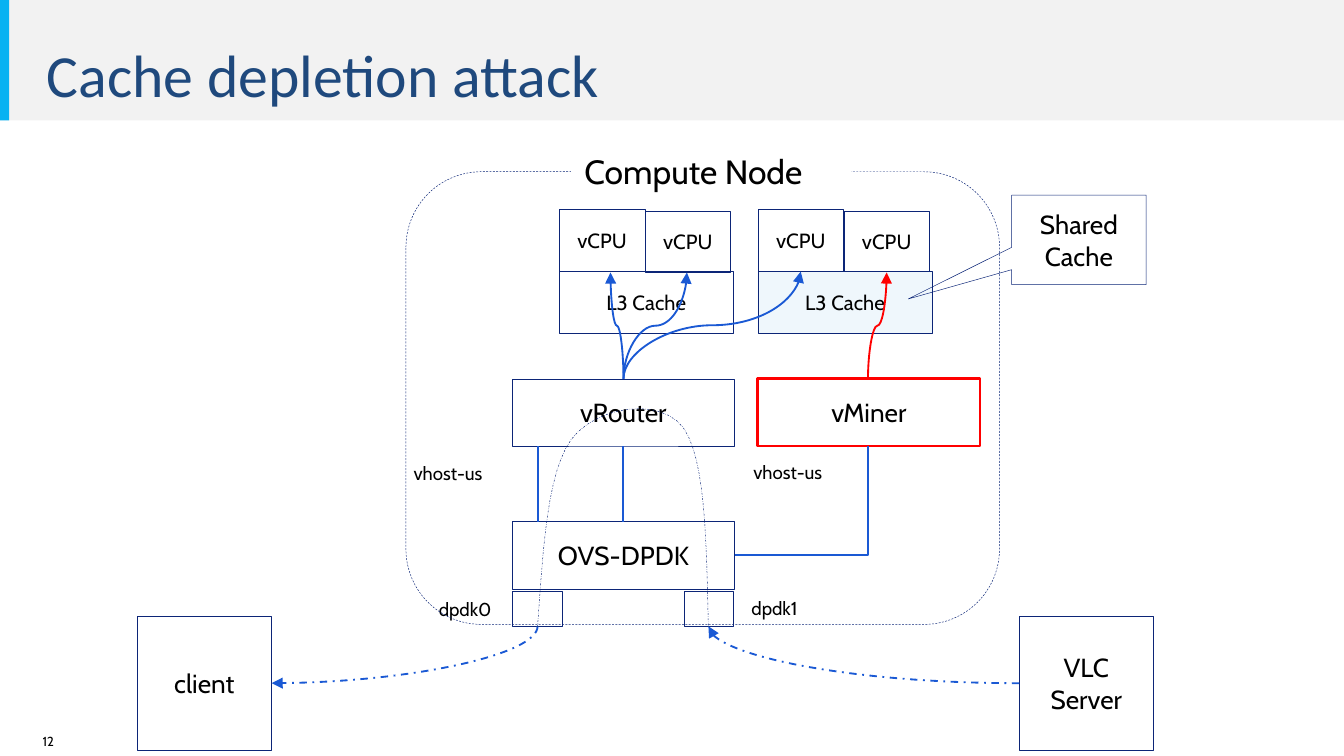
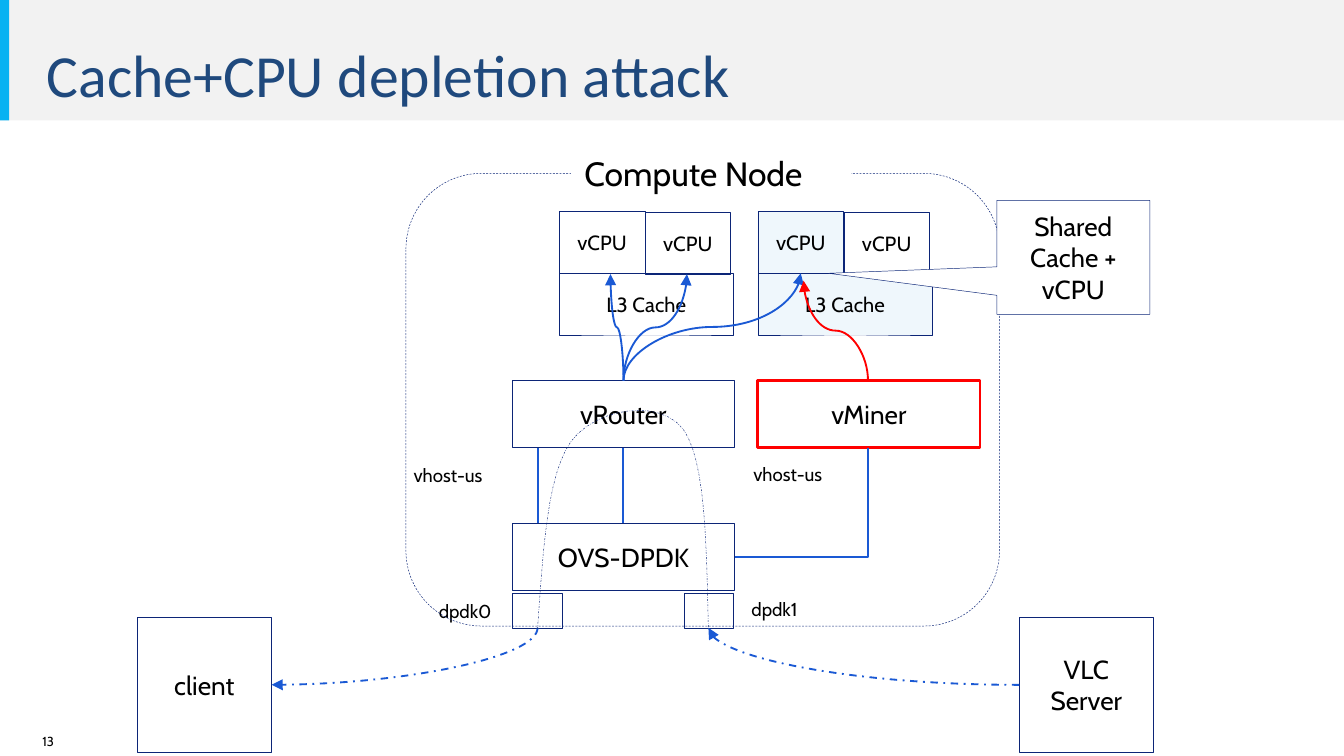
from dataclasses import dataclass
from typing import Any

from lxml.etree import SubElement
from pptx import Presentation
from pptx.dml.color import RGBColor
from pptx.enum.dml import MSO_LINE as Dash
from pptx.enum.shapes import MSO_CONNECTOR as Link, MSO_SHAPE as Shape
from pptx.enum.text import MSO_ANCHOR as Anchor, MSO_AUTO_SIZE as AutoSize, PP_ALIGN as Align
from pptx.oxml.ns import qn
from pptx.util import Pt

# Colours and fonts
WHITE = RGBColor(0xFF, 0xFF, 0xFF)
BLACK = RGBColor(0x00, 0x00, 0x00)
BAND_GREY = RGBColor(0xF2, 0xF2, 0xF2)
ACCENT = RGBColor(0x08, 0xB2, 0xF2)
TITLE_BLUE = RGBColor(0x1F, 0x49, 0x7D)
OUTLINE = RGBColor(0x0C, 0x25, 0x77)
LINK_BLUE = RGBColor(0x1A, 0x59, 0xD4)
ATTACK_RED = RGBColor(0xFF, 0x00, 0x00)
SHARED = RGBColor(0xEF, 0xF7, 0xFC)
BODY_FONT, TITLE_FONT = "Cabin", "Calibri"

# Directions in which a connector leaves its start, as rotations
DOWN, LEFT, UP = 90, 180, 270

# Cubic segments of the traffic path through the router: two controls, one end
TRAFFIC_START = (288, 336)
TRAFFIC_CURVES = [
    ((291, 294.5), (293, 253.5), (306, 235.5)),
    ((319.5, 217.5), (353.5, 212.5), (366, 229)),
    ((378, 245.5), (378.5, 290.5), (379.5, 335.5)),
]
CURVE_STEPS = 12


def points(*lengths):
    return [Pt(length) for length in lengths]


def set_margins(frame, left, top, right, bottom):
    frame.margin_left, frame.margin_top, frame.margin_right, frame.margin_bottom = points(
        left, top, right, bottom)


def write(frame, text, size, font=BODY_FONT, color=BLACK, align=Align.LEFT):
    frame.text = text
    paragraph = frame.paragraphs[0]
    paragraph.alignment = align
    run_font = paragraph.runs[0].font
    run_font.name, run_font.size = font, Pt(size)
    run_font.color.rgb = color


def paint(shape, fill=None, line=None, width=0.25, dash=None):
    shape.shadow.inherit = False
    if fill is None:
        shape.fill.background()
    else:
        shape.fill.solid()
        shape.fill.fore_color.rgb = fill
    if line is None:
        shape.line.fill.background()
    else:
        shape.line.color.rgb = line
        shape.line.width = Pt(width)
        if dash is not None:
            shape.line.dash_style = dash


def bezier(start, control1, control2, end):
    """Points along a cubic curve, without its start."""
    for step in range(1, CURVE_STEPS + 1):
        t = step / CURVE_STEPS
        u = 1 - t
        yield tuple(u**3 * a + 3 * u * u * t * b + 3 * u * t * t * c + t**3 * d
                    for a, b, c, d in zip(start, control1, control2, end))


@dataclass
class Diagram:
    """Draws diagram parts on a slide, all lowered by the same drop."""
    slide: Any
    drop: float

    def box(self, x, y, w, h, text="", size=14, fill=None, line=OUTLINE, width=0.25,
            dash=None, kind=Shape.RECTANGLE):
        box = self.slide.shapes.add_shape(kind, *points(x, y + self.drop, w, h))
        paint(box, fill, line, width, dash)
        if text:
            frame = box.text_frame
            frame.word_wrap = True
            frame.vertical_anchor = Anchor.MIDDLE
            set_margins(frame, 5, 3, 5, 3)
            write(frame, text, size, align=Align.CENTER)
        return box

    def label(self, x, y, w, h, text, size=10, fill=None):
        label = self.slide.shapes.add_textbox(*points(x, y + self.drop, w, h))
        if fill is not None:
            label.fill.solid()
            label.fill.fore_color.rgb = fill
        frame = label.text_frame
        frame.word_wrap = False
        write(frame, text, size)
        frame.auto_size = AutoSize.SHAPE_TO_FIT_TEXT

    def link(self, start, end, kind=Link.STRAIGHT, leaving=None, preset=None,
             color=LINK_BLUE, dash=None, arrow=False):
        (x1, y1), (x2, y2) = start, end
        dx, dy = x2 - x1, y2 - y1
        # Turn the span back, so that the connector leaves along its own x axis
        across, down = {None: (dx, dy), DOWN: (dy, -dx), LEFT: (-dx, -dy),
                        UP: (-dy, dx)}[leaving]
        mid_x, mid_y = (x1 + x2) / 2, (y1 + y2) / 2 + self.drop
        link = self.slide.shapes.add_connector(kind, *points(
            mid_x - across / 2, mid_y - down / 2, mid_x + across / 2, mid_y + down / 2))
        if leaving is not None:
            link.rotation = leaving
        properties = link.element.spPr
        if preset:
            properties.find(qn("a:prstGeom")).set("prst", preset)
        link.line.color.rgb = color
        link.line.width = Pt(1)
        if dash is not None:
            link.line.dash_style = dash
        if arrow:
            SubElement(properties.find(qn("a:ln")), qn("a:tailEnd"), type="triangle")
        SubElement(properties, qn("a:effectLst"))

    def usage_arrow(self, start, end, color=LINK_BLUE):
        self.link(start, end, Link.CURVE, UP, color=color, arrow=True)

    def stream_arrow(self, start, end, leaving):
        self.link(start, end, Link.CURVE, leaving, "curvedConnector2",
                  dash=Dash.DASH_DOT, arrow=True)

    def cpu_bank(self, x, cpu_fill=None, cache_fill=None):
        self.box(x + 46, 113, 46, 33, "vCPU", 11)
        self.box(x, 112.3, 46, 33, "vCPU", 11, cpu_fill)
        self.box(x, 145.5, 93.5, 33, "L3 Cache", 11, cache_fill)

    def traffic_path(self):
        here, route = TRAFFIC_START, []
        for control1, control2, end in TRAFFIC_CURVES:
            route += bezier(here, control1, control2, end)
            here = end
        start_x, start_y = TRAFFIC_START
        outline = self.slide.shapes.build_freeform(*points(start_x, start_y + self.drop))
        outline.add_line_segments([points(x, y + self.drop) for x, y in route], close=False)
        paint(outline.convert_to_shape(), line=OUTLINE, dash=Dash.DASH_DOT)

    def callout(self, x, y, w, h, text, pointer, fill=None):
        callout = self.box(x, y, w, h, text, fill=fill, kind=Shape.RECTANGULAR_CALLOUT)
        callout.adjustments[0], callout.adjustments[1] = pointer


def add_frame(slide, title, number):
    """Title band, accent bar, title and page number."""
    for width, color in ((720, BAND_GREY), (5, ACCENT)):
        band = slide.shapes.add_shape(Shape.RECTANGLE, *points(0, 0, width, 64.5))
        paint(band, color)

    page = slide.shapes.add_textbox(*points(0, 389.5, 36, 16)).text_frame
    page.word_wrap = True
    write(page, str(number), 7, align=Align.RIGHT)

    heading = slide.shapes.add_textbox(*points(18, 5, 562, 54)).text_frame
    heading.word_wrap = True
    heading.vertical_anchor = Anchor.BOTTOM
    set_margins(heading, 7.2, 0, 0, 0)
    write(heading, title, 32, TITLE_FONT, TITLE_BLUE)
    heading.paragraphs[0].line_spacing = 0.9


def draw_attack(diagram, miner_target, shared_cpu=None):
    # Switch, virtual machines and ports
    diagram.box(274.5, 279.5, 119, 36, "OVS-DPDK", fill=WHITE)
    diagram.box(274.5, 203, 119, 36, "vRouter", fill=WHITE)
    diagram.box(406, 203, 119, 36, "vMiner", fill=WHITE, line=ATTACK_RED, width=1.5)
    for port_x in (274.5, 366.5):
        diagram.box(port_x, 317, 26.5, 18.5, fill=WHITE)
    diagram.label(228, 317, 46, 19.5, "dpdk0")
    diagram.label(395.5, 316, 46, 19.5, "dpdk1")
    diagram.label(214.5, 244, 60, 19.5, "vhost-us")
    diagram.label(396.5, 243.5, 60, 19.5, "vhost-us")

    # Links to the switch
    for link_x in (288, 334):
        diagram.link((link_x, 239), (link_x, 279.5))
    diagram.link((465, 239), (393.5, 297.5), Link.ELBOW, DOWN, "bentConnector2")

    # Processors and caches
    diagram.cpu_bank(299.5)
    diagram.cpu_bank(406, shared_cpu, SHARED)

    # Video stream from server to client
    diagram.box(73.5, 330, 72, 72, "client")
    diagram.box(546, 330, 72, 72, "VLC Server")
    diagram.stream_arrow((546, 366), (379.5, 335.5), LEFT)
    diagram.stream_arrow((288, 335.5), (145.5, 366), DOWN)
    diagram.traffic_path()

    # Processor use of each virtual machine
    for cpu in ((327, 146), (368, 146), (429, 145.5)):
        diagram.usage_arrow((334, 203), cpu)
    diagram.usage_arrow((465, 203), miner_target, ATTACK_RED)

    # Compute node border
    diagram.box(217.5, 92, 318, 242.5, dash=Dash.DASH, kind=Shape.ROUNDED_RECTANGLE)
    diagram.label(306, 77.3, 150, 29, "Compute Node", 18, WHITE)


def main():
    prs = Presentation()
    prs.slide_width, prs.slide_height = points(720, 405)
    blank = prs.slide_layouts[6]

    # Cache depletion
    slide = prs.slides.add_slide(blank)
    add_frame(slide, "Cache depletion attack", 12)
    cache_attack = Diagram(slide, 0)
    draw_attack(cache_attack, (475, 146))
    cache_attack.callout(542, 104.5, 72, 48, "Shared Cache", (-1.27, 0.66))

    # Cache and CPU depletion
    slide = prs.slides.add_slide(blank)
    add_frame(slide, "Cache+CPU depletion attack", 13)
    cpu_attack = Diagram(slide, 0.9)
    draw_attack(cpu_attack, (430.5, 149.5), SHARED)
    cpu_attack.callout(534, 106.5, 82, 61, "Shared Cache + vCPU", (-1.6, 0.14), WHITE)

    prs.save("out.pptx")


if __name__ == "__main__":
    main()
